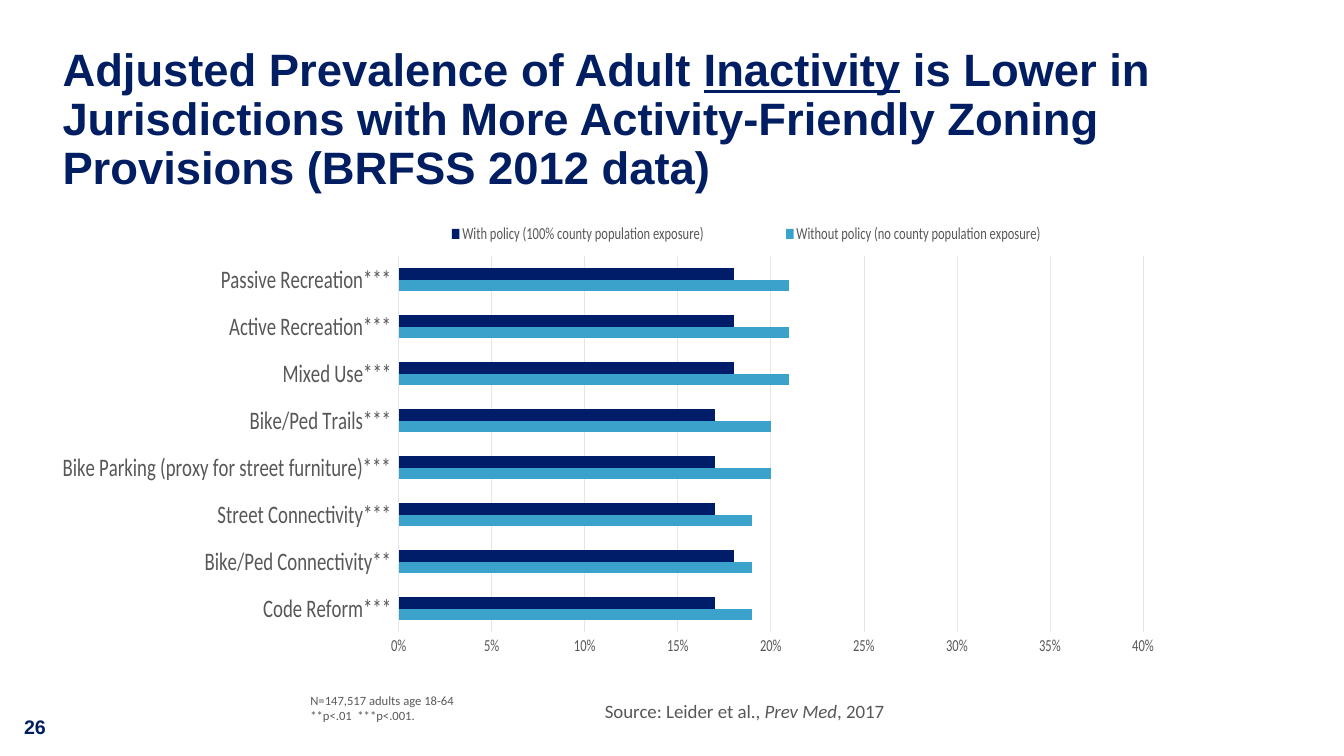
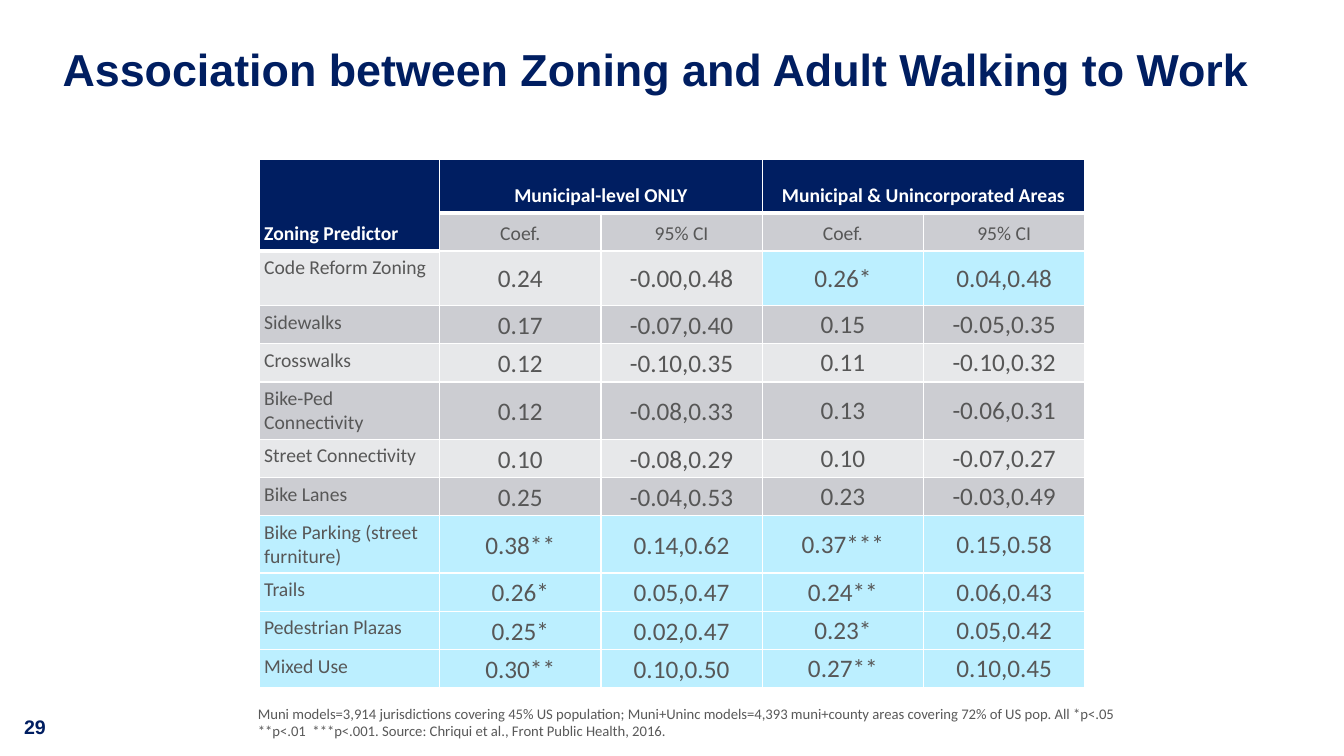
from lxml.etree import SubElement as Sub
from pptx import Presentation
from pptx.chart.data import CategoryChartData as ChartData
from pptx.dml.color import RGBColor as RGB
from pptx.enum.chart import XL_CHART_TYPE as Kind
from pptx.enum.chart import XL_LEGEND_POSITION as Legend
from pptx.enum.chart import XL_TICK_LABEL_POSITION as Label
from pptx.enum.chart import XL_TICK_MARK as Tick
from pptx.enum.text import MSO_ANCHOR as Anchor
from pptx.enum.text import PP_ALIGN as Align
from pptx.oxml.ns import qn
from pptx.util import Inches, Pt

# Shared look
NAVY = RGB(0x00, 0x1E, 0x61)
DEEP = RGB(0x00, 0x1D, 0x69)
BLUE = RGB(0x3A, 0xA2, 0xCB)
SKY = RGB(0xBC, 0xEF, 0xFF)
GREY = RGB(0x57, 0x57, 0x57)
NOTE = RGB(0x59, 0x59, 0x59)
MID = RGB(0xCC, 0xCD, 0xD2)
PALE = RGB(0xE7, 0xE8, 0xEA)
GRID = RGB(0xE6, 0xE6, 0xE6)
WHITE = RGB(0xFF, 0xFF, 0xFF)
HEAD, BODY = "Arial", "Calibri"

# Chart content, from the bottom bar up: name, without policy, with policy
RATES = [
    ("Code Reform***", 0.19, 0.17),
    ("Bike/Ped Connectivity**", 0.19, 0.18),
    ("Street Connectivity***", 0.19, 0.17),
    ("Bike Parking (proxy for street furniture)***", 0.2, 0.17),
    ("Bike/Ped Trails***", 0.2, 0.17),
    ("Mixed Use***", 0.21, 0.18),
    ("Active Recreation***", 0.21, 0.18),
    ("Passive Recreation***", 0.21, 0.18),
]

# Table content
TOP = ["Zoning Predictor", "Municipal-level ONLY", "",
       "Municipal & Unincorporated Areas", ""]
SUB = ["", "Coef.", "95% CI", "Coef.", "95% CI"]
ROWS = [
    ["Code Reform Zoning", "0.24", "-0.00,0.48", "0.26*", "0.04,0.48"],
    ["Sidewalks", "0.17", "-0.07,0.40", "0.15", "-0.05,0.35"],
    ["Crosswalks", "0.12", "-0.10,0.35", "0.11", "-0.10,0.32"],
    ["Bike-Ped Connectivity", "0.12", "-0.08,0.33", "0.13", "-0.06,0.31"],
    ["Street Connectivity", "0.10", "-0.08,0.29", "0.10", "-0.07,0.27"],
    ["Bike Lanes", "0.25", "-0.04,0.53", "0.23", "-0.03,0.49"],
    ["Bike Parking (street furniture)", "0.38**", "0.14,0.62",
     "0.37***", "0.15,0.58"],
    ["Trails", "0.26*", "0.05,0.47", "0.24**", "0.06,0.43"],
    ["Pedestrian Plazas", "0.25*", "0.02,0.47", "0.23*", "0.05,0.42"],
    ["Mixed Use", "0.30**", "0.10,0.50", "0.27**", "0.10,0.45"],
]
WIDE = [1.79, 1.6, 1.6, 1.6, 1.6]
TALL = {0: 0.53, 2: 0.54, 5: 0.54}


def style(font, size, color, name=BODY, bold=False):
    font.size, font.name, font.bold = Pt(size), name, bold
    font.color.rgb = color


def write(frame, *paras, size=14, color=GREY, name=BODY, bold=False,
          align=Align.LEFT, space=None):
    """Each paragraph is a string or a list of runs: text or (text, mark)."""
    for n, para in enumerate(paras):
        p = frame.add_paragraph() if n else frame.paragraphs[0]
        p.alignment = align
        if space:
            p.line_spacing = space
        for part in [para] if isinstance(para, str) else para:
            words, mark = (part, None) if isinstance(part, str) else part
            run = p.add_run()
            run.text = words
            style(run.font, size, color, name, bold)
            if mark:
                setattr(run.font, mark, True)


def add_text(slide, spot, *paras, pad=True, wrap=True, **form):
    frame = slide.shapes.add_textbox(*map(Inches, spot)).text_frame
    frame.word_wrap = wrap
    if not pad:
        inset(frame, 0, 0, 0)
    write(frame, *paras, **form)


def inset(box, side, top, base):
    box.margin_left = box.margin_right = Inches(side)
    box.margin_top, box.margin_bottom = Inches(top), Inches(base)


def add_page(deck, number, title, size):
    slide = deck.slides.add_slide(deck.slide_layouts[6])
    add_text(slide, (0.14, 7.04, 0.66, 0.34), number,
             color=NAVY, name=HEAD, bold=True)
    add_text(slide, (0.62, 0.47, 12.08, 0.89), title, pad=False,
             size=size, color=NAVY, name=HEAD, bold=True, space=0.9)
    return slide


# Chart
def place(chart, tag, index, **rules):
    """Give a chart part a fixed place, in shares of the chart's size."""
    part = chart._chartSpace.find(".//" + qn("c:" + tag))
    for old in part.findall(qn("c:layout")):
        part.remove(old)
    layout = Sub(part, qn("c:layout"))
    part.insert(index, layout)
    manual = Sub(layout, qn("c:manualLayout"))
    for key, val in rules.items():
        Sub(manual, qn("c:" + key), val=str(val))


def set_line(line):
    line.color.rgb, line.width = GRID, Pt(0.75)


def add_bars(slide):
    names, without, having = zip(*RATES)
    data = ChartData(number_format="0%")
    data.categories = names
    data.add_series("Without policy (no county population exposure)", without)
    data.add_series("With policy (100% county population exposure)", having)
    spot = map(Inches, (0.62, 2.05, 10.88, 4.91))
    chart = slide.shapes.add_chart(Kind.BAR_CLUSTERED, *spot, data).chart
    chart.has_title = False
    style(chart.font, 12, GREY)
    chart.has_legend = True
    chart.legend.position = Legend.TOP
    chart.legend.include_in_layout = False
    style(chart.legend.font, 12, GREY)

    plot = chart.plots[0]
    plot.gap_width, plot.overlap, plot.vary_by_categories = 219, 0, False
    for bars, color in zip(plot.series, (BLUE, DEEP)):
        bars.format.fill.solid()
        bars.format.fill.fore_color.rgb = color

    cat, val = chart.category_axis, chart.value_axis
    for axis, size in ((cat, 18), (val, 12)):
        axis.major_tick_mark = axis.minor_tick_mark = Tick.NONE
        style(axis.tick_labels.font, size, GREY)
    cat.tick_label_position = Label.LOW
    set_line(cat.format.line)
    val.minimum_scale, val.maximum_scale, val.major_unit = 0, 0.4, 0.05
    val.tick_labels.number_format = "0%"
    val.tick_labels.number_format_is_linked = False
    val.format.line.fill.background()
    set_line(val.major_gridlines.format.line)

    edge = {"xMode": "edge", "yMode": "edge"}
    place(chart, "plotArea", 0, layoutTarget="inner", **edge,
          x=0.07, y=0.1, w=0.91, h=0.76)
    place(chart, "legend", 1, **edge, x=0.04, y=0.03, w=0.91, h=0.05)


# Table
def paint(cell, color, base=1):
    props = cell._tc.get_or_add_tcPr()
    for side in "LRTB":
        width = Pt(base if side == "B" else 1)
        line = Sub(props, qn("a:ln" + side), w=str(width))
        Sub(Sub(line, qn("a:solidFill")), qn("a:srgbClr"), val=str(WHITE))
    cell.fill.solid()
    cell.fill.fore_color.rgb = color


def fill_head(cell, r, c, words):
    dark = r == 0 or c == 0
    paint(cell, NAVY if dark else MID, 3 if dark else 1)
    cell.vertical_anchor = Anchor.BOTTOM
    inset(cell, 0.09 if r == 0 and c else 0.05, 0.05, 0.05)
    if words:
        write(cell.text_frame, words, color=WHITE if dark else GREY,
              bold=dark, align=Align.CENTER if c else Align.LEFT)


def fill_body(cell, r, c, words):
    lit = r >= 8 or (r == 2 and c >= 3)
    paint(cell, SKY if lit else MID if r % 2 else PALE)
    if c == 0:
        inset(cell, 0.05, 0.05, 0.05)
        write(cell.text_frame, words)
        return
    cell.vertical_anchor = Anchor.MIDDLE
    inset(cell, *((0.07, 0, 0) if c < 3 else (0.01, 0.01, 0)))
    write(cell.text_frame, words, size=18, align=Align.CENTER,
          space=1.07 if c < 3 else None)


def add_grid(slide):
    cells = [TOP, SUB] + ROWS
    spot = map(Inches, (2.57, 1.58, sum(WIDE), 5.24))
    table = slide.shapes.add_table(len(cells), len(WIDE), *spot).table
    table.first_row = table.horz_banding = False
    for col, width in zip(table.columns, WIDE):
        col.width = Inches(width)
    for r, row in enumerate(cells):
        table.rows[r].height = Inches(TALL.get(r, 0.38))
        fill = fill_head if r < 2 else fill_body
        for c, words in enumerate(row):
            fill(table.cell(r, c), r, c, words)
    for start, end in (((0, 0), (1, 0)), ((0, 1), (0, 2)), ((0, 3), (0, 4))):
        table.cell(*start).merge(table.cell(*end))


def main():
    deck = Presentation()
    deck.slide_width, deck.slide_height = Inches(13.33), Inches(7.5)

    # Inactivity chart
    slide = add_page(deck, "26", [
        "Adjusted Prevalence of Adult ", ("Inactivity", "underline"),
        " is Lower in Jurisdictions with More Activity-Friendly Zoning "
        "Provisions (BRFSS 2012 data)"], 32.4)
    add_bars(slide)
    add_text(slide, (2.98, 6.82, 3.66, 0.4), "N=147,517 adults age 18-64",
             "**p<.01  ***p<.001.", size=9, color=NOTE)
    add_text(slide, (5.9, 6.89, 3.02, 0.33),
             ["Source: Leider et al., ", ("Prev Med", "italic"), ", 2017"],
             size=13.5, wrap=False)

    # Walking to work table
    slide = add_page(
        deck, "29", "Association between Zoning and Adult Walking to Work", 32)
    add_grid(slide)
    add_text(slide, (2.46, 6.94, 9, 0.45),
             "Muni models=3,914 jurisdictions covering 45% US population; "
             "Muni+Uninc models=4,393 muni+county areas covering 72% of US "
             "pop. All *p<.05 **p<.01  ***p<.001. Source: Chriqui et al., "
             "Front Public Health, 2016.", size=10.5, color=NOTE)
    deck.save("out.pptx")


if __name__ == "__main__":
    main()
